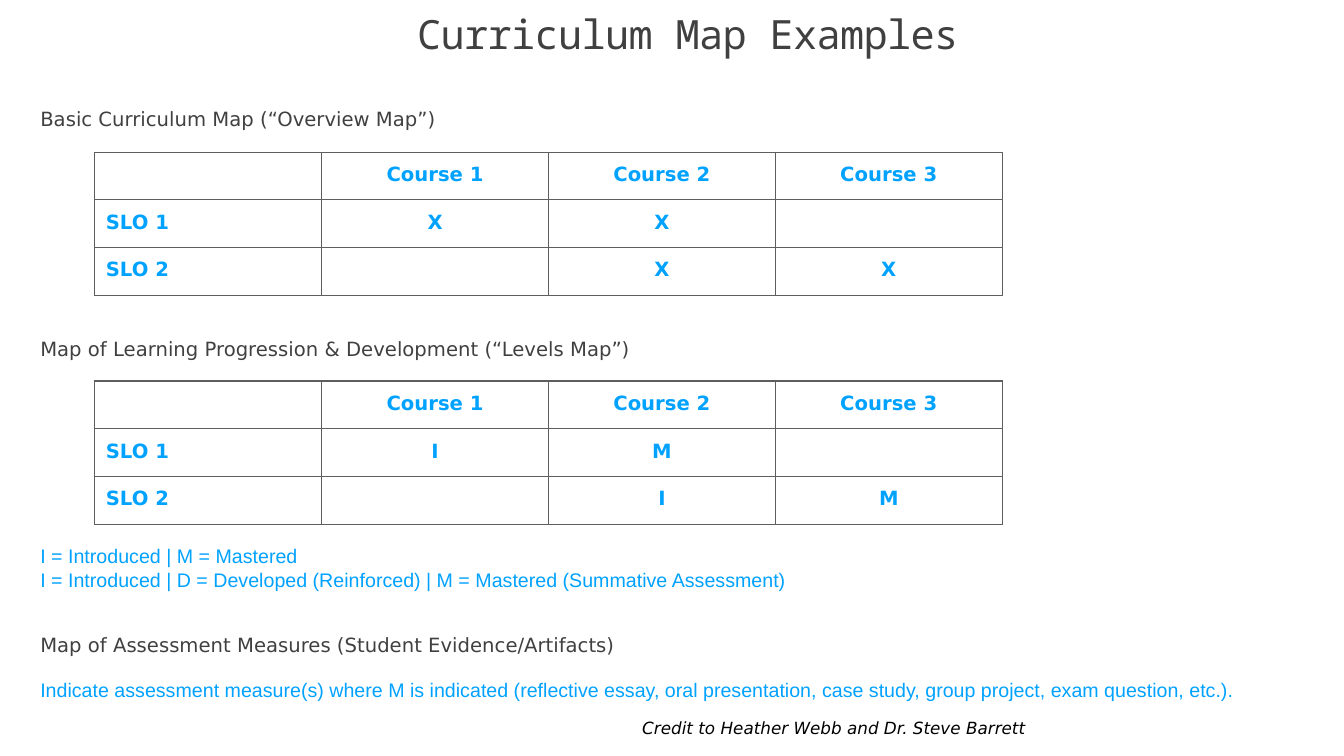
from lxml import etree
from pptx import Presentation
from pptx import util as u
from pptx.dml.color import RGBColor
from pptx.enum import text
from pptx.oxml import ns

CHARCOAL = RGBColor(0x40, 0x40, 0x40)
BLUE = RGBColor(0x00, 0xA2, 0xFF)
BLACK = RGBColor(0, 0, 0)
BORDER = "5E5E5E"
SANS, ARIAL, MONO = "DejaVu Sans", "Arial", "Noto Sans Mono"
COURSES = ["", "Course 1", "Course 2", "Course 3"]
OVERVIEW = [COURSES, ["SLO 1", "X", "X", ""], ["SLO 2", "", "X", "X"]]
LEVELS = [COURSES, ["SLO 1", "I", "M", ""], ["SLO 2", "", "I", "M"]]
LEGEND = [
    "I = Introduced | M = Mastered",
    "I = Introduced | D = Developed (Reinforced) | M = Mastered (Summative Assessment)",
]
MEASURES = (
    "Indicate assessment measure(s) where M is indicated (reflective essay, "
    "oral presentation, case study, group project, exam question, etc.)."
)


def style(para, size, name, color, bold=False, italic=False):
    """Set the font of a whole paragraph."""
    font = para.font
    font.size, font.name, font.bold, font.italic = u.Pt(size), name, bold, italic
    font.color.rgb = color


def set_margins(frame, side, top, bottom):
    """Set the inner margins of a text frame or table cell, in inches."""
    frame.margin_left = frame.margin_right = u.Inches(side)
    frame.margin_top, frame.margin_bottom = u.Inches(top), u.Inches(bottom)


def add_title(page, left, top, width, height):
    """Place and format the slide title."""
    title = page.shapes.title
    title.left, title.top = u.Inches(left), u.Inches(top)
    title.width, title.height = u.Inches(width), u.Inches(height)
    frame = title.text_frame
    frame.text = "Curriculum Map Examples"
    frame.auto_size = text.MSO_AUTO_SIZE.NONE
    frame.vertical_anchor = text.MSO_ANCHOR.BOTTOM
    set_margins(frame, 0.13, 0.13, 0.13)
    para = frame.paragraphs[0]
    para.alignment = text.PP_ALIGN.CENTER
    para.line_spacing = 0.9
    style(para, 28.8, MONO, CHARCOAL)
    para.runs[0]._r.get_or_add_rPr().set("spc", "-50")


def add_lines(page, left, top, width, height, lines, name, color, size=14, italic=False):
    """Write lines of text, centred vertically in their box."""
    box = page.shapes.add_textbox(*map(u.Inches, (left, top, width, height)))
    frame = box.text_frame
    frame.word_wrap = True
    frame.vertical_anchor = text.MSO_ANCHOR.MIDDLE
    set_margins(frame, 0, 0, 0)
    frame.text = "\n".join(lines)
    for para in frame.paragraphs:
        style(para, size, name, color, italic=italic)


def add_borders(cell):
    """Draw a thin line on each side of a cell."""
    properties = cell._tc.get_or_add_tcPr()
    for index, side in enumerate(("lnL", "lnR", "lnT", "lnB")):
        line = etree.Element(ns.qn(f"a:{side}"), w=str(u.Pt(1)))
        fill = etree.SubElement(line, ns.qn("a:solidFill"))
        etree.SubElement(fill, ns.qn("a:srgbClr"), val=BORDER)
        properties.insert(index, line)


def add_map(page, left, top, width, height, rows):
    """Place a curriculum map with outcomes down and courses across."""
    frame = page.shapes.add_table(
        len(rows), len(rows[0]), *map(u.Inches, (left, top, width, height)))
    table = frame.table
    table.first_row = table.horz_banding = False
    for row_index, row in enumerate(rows):
        for column_index, label in enumerate(row):
            cell = table.cell(row_index, column_index)
            cell.text = label
            cell.fill.background()
            set_margins(cell, 0.11, 0.11, 0.05)
            para = cell.text_frame.paragraphs[0]
            style(para, 14, SANS, BLUE, bold=True)
            if column_index:
                para.alignment = text.PP_ALIGN.CENTER
            add_borders(cell)


def add_section(page, left, top, heading):
    """Write a section heading."""
    add_lines(page, left, top, 12.4, 0.3, [heading], SANS, CHARCOAL)


def main():
    """Build the slide and save it."""
    deck = Presentation()
    deck.slide_width, deck.slide_height = u.Inches(13.33), u.Inches(7.5)
    page = deck.slides.add_slide(deck.slide_layouts[5])
    add_title(page, 1.01, 0.07, 11.62, 0.64)
    add_section(page, 0.4, 1.03, "Basic Curriculum Map (“Overview Map”)")
    add_map(page, 0.94, 1.51, 9, 1.42, OVERVIEW)
    add_section(page, 0.4, 3.31, "Map of Learning Progression & Development (“Levels Map”)")
    add_map(page, 0.94, 3.78, 9, 1.42, LEVELS)
    add_lines(page, 0.4, 5.4, 12.4, 0.46, LEGEND, ARIAL, BLUE)
    add_section(page, 0.4, 6.25, "Map of Assessment Measures (Student Evidence/Artifacts)")
    add_lines(page, 0.4, 6.69, 12.4, 0.3, [MEASURES], ARIAL, BLUE)
    add_lines(page, 6.37, 7.07, 6, 0.3, ["Credit to Heather Webb and Dr. Steve Barrett"],
              SANS, BLACK, size=12, italic=True)
    deck.save("out.pptx")


if __name__ == "__main__":
    main()
